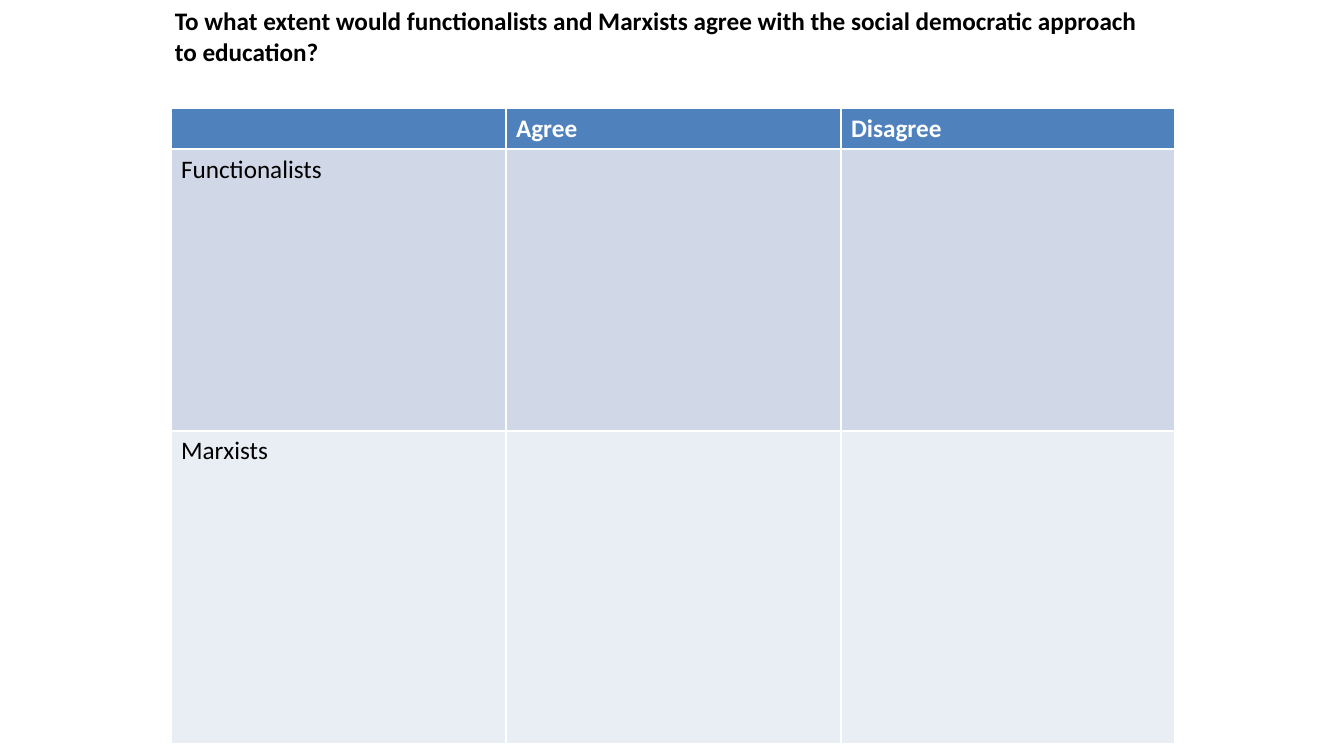
from pptx import Presentation
from pptx.dml.color import RGBColor
from pptx.enum.text import MSO_ANCHOR
from pptx.util import Pt

COLORS = {
    "heading": "4F81BD",
    "band_dark": "D0D8E8",
    "band_light": "E9EDF4",
    "text": "000000",
    "heading_text": "FFFFFF",
}


class SlideBuilder:
    """Draws styled elements on one slide, with lengths in px."""

    scale = 914400 / 100.8
    font_name = "Calibri"
    font_size = Pt(18)

    def __init__(self, presentation, width, height):
        presentation.slide_width = self.length(width)
        presentation.slide_height = self.length(height)
        self.slide = presentation.slides.add_slide(presentation.slide_layouts[6])

    def length(self, pixels):
        return round(pixels * self.scale)

    def set_text(self, text_frame, text, color, bold):
        text_frame.text = text
        for run in text_frame.paragraphs[0].runs:
            run.font.name = self.font_name
            run.font.size = self.font_size
            run.font.bold = bold
            run.font.color.rgb = RGBColor.from_string(COLORS[color])

    def add_title(self, text, *box):
        shape = self.slide.shapes.add_textbox(*map(self.length, box))
        shape.text_frame.word_wrap = True
        shape.text_frame.vertical_anchor = MSO_ANCHOR.MIDDLE
        self.set_text(shape.text_frame, text, "text", True)

    def add_table(self, rows, fills, left, top, widths, heights):
        box = (left, top, sum(widths), sum(heights))
        table = self.slide.shapes.add_table(
            len(rows), len(widths), *map(self.length, box)
        ).table
        for column, width in zip(table.columns, widths):
            column.width = self.length(width)
        for row_index, (row, texts) in enumerate(zip(table.rows, rows)):
            row.height = self.length(heights[row_index])
            is_heading = row_index == 0
            color = "heading_text" if is_heading else "text"
            for cell, text in zip(row.cells, texts):
                cell.fill.solid()
                cell.fill.fore_color.rgb = RGBColor.from_string(COLORS[fills[row_index]])
                if text:
                    self.set_text(cell.text_frame, text, color, is_heading)


def main():
    presentation = Presentation()
    builder = SlideBuilder(presentation, 1344, 756)
    builder.add_title(
        "To what extent would functionalists and Marxists agree with "
        "the social democratic approach to education?",
        165, 0, 1008, 72,
    )
    builder.add_table(
        [("", "Agree", "Disagree"), ("Functionalists", "", ""), ("Marxists", "", "")],
        ("heading", "band_dark", "band_light"),
        171, 108, (335, 335, 334), (41, 282, 313),
    )
    presentation.save("out.pptx")


if __name__ == "__main__":
    main()
